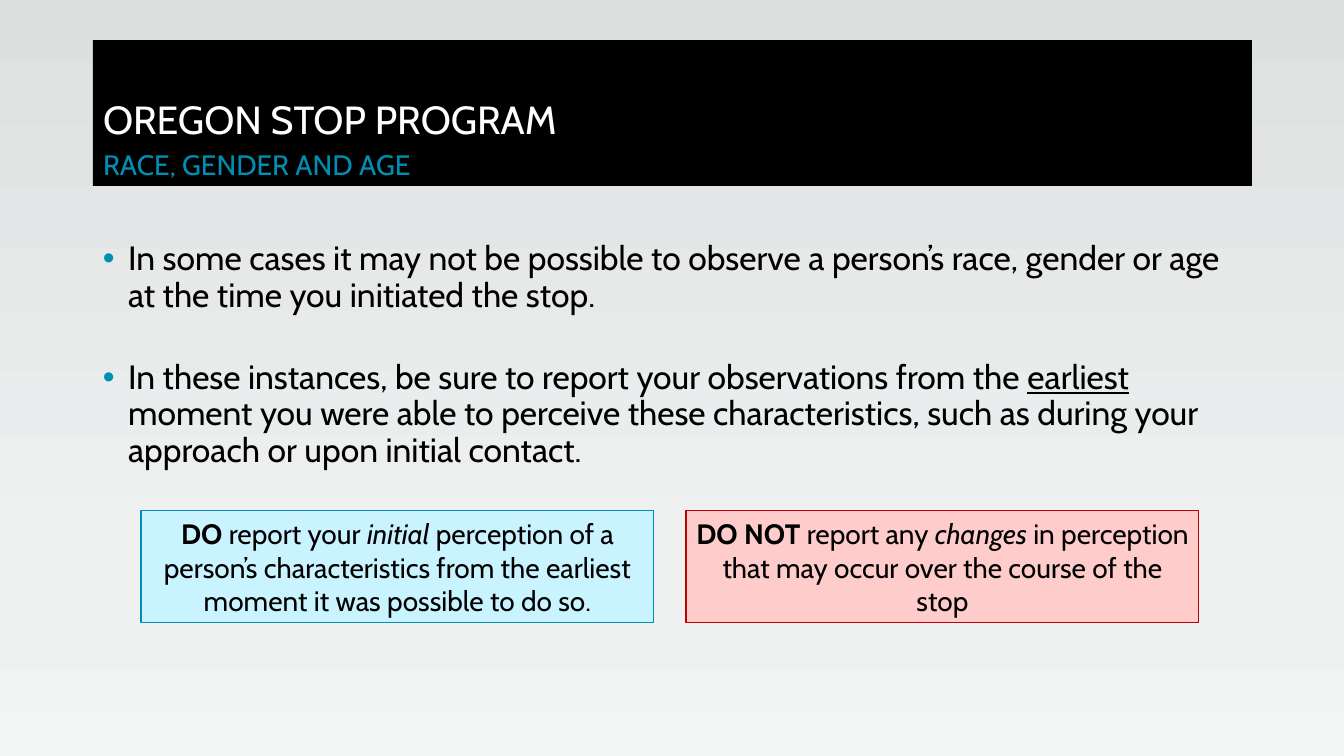
from dataclasses import dataclass

import lxml.etree
import pptx
import pptx.dml.color
import pptx.enum.shapes
import pptx.enum.text
import pptx.oxml.ns
import pptx.util

EMU_PER_PX = 914400 / 100.8
qn = pptx.oxml.ns.qn


@dataclass(frozen=True)
class Theme:
    font: str = "Cabin"
    ink: str = "000000"
    paper: str = "FFFFFF"
    accent: str = "008EB3"
    do_fill: str = "C9F4FF"
    dont_fill: str = "FFCCCC"
    dont_line: str = "BE0000"
    backdrop: tuple[tuple[int, str], ...] = (
        (0, "DCE0DF"), (74, "EFF1F1"), (83, "EFF1F1"), (100, "F4F6F5"))
    title_size: int = 28
    body_size: int = 24
    small_size: int = 20


@dataclass(frozen=True)
class Run:
    text: str
    bold: bool = False
    italic: bool = False
    underline: bool = False


@dataclass(frozen=True)
class Callout:
    fill: str
    line: str
    runs: tuple[Run, ...]


THEME = Theme()

BULLETS = (
    (Run("In some cases it may not be possible to observe a person’s race, "
         "gender or age at the time you initiated the stop."),),
    (Run("In these instances, be sure to report your observations from the "),
     Run("earliest", underline=True),
     Run(" moment you were able to perceive these characteristics, "
         "such as during your approach or upon initial contact.")),
)

CALLOUTS = (
    Callout(THEME.do_fill, THEME.accent, (
        Run("DO", bold=True), Run(" report your "), Run("initial", italic=True),
        Run(" perception of a person’s characteristics from the earliest "
            "moment it was possible to do so."))),
    Callout(THEME.dont_fill, THEME.dont_line, (
        Run("DO NOT", bold=True), Run(" report any "), Run("changes", italic=True),
        Run(" in perception that may occur over the course of the stop"))),
)


def px(n: int) -> pptx.util.Emu:
    return pptx.util.Emu(round(n * EMU_PER_PX))


def rgb(code: str) -> pptx.dml.color.RGBColor:
    return pptx.dml.color.RGBColor.from_string(code)


def add_run(p, run: Run, size: int, color: str) -> None:
    r = p.add_run()
    r.text = run.text
    r.font.name = THEME.font
    r.font.size = pptx.util.Pt(size)
    r.font.color.rgb = rgb(color)
    r.font.bold = run.bold
    r.font.italic = run.italic
    r.font.underline = run.underline


def set_background(slide) -> None:
    fill = slide.background.fill
    fill.gradient()
    fill.gradient_angle = 270
    stops = next(slide._element.iter(qn("a:gsLst")))
    for stop in list(stops):
        stops.remove(stop)
    for percent, color in THEME.backdrop:
        gs = lxml.etree.SubElement(stops, qn("a:gs"), pos=str(percent * 1000))
        lxml.etree.SubElement(gs, qn("a:srgbClr"), val=color)


def set_title(slide) -> None:
    sp = slide.shapes.title
    sp.left, sp.top, sp.width, sp.height = px(93), px(40), px(1159), px(146)
    sp.fill.solid()
    sp.fill.fore_color.rgb = rgb(THEME.ink)
    tf = sp.text_frame
    tf.auto_size = pptx.enum.text.MSO_AUTO_SIZE.NONE
    tf.vertical_anchor = pptx.enum.text.MSO_ANCHOR.BOTTOM
    p = tf.paragraphs[0]
    p.alignment = pptx.enum.text.PP_ALIGN.LEFT
    p.line_spacing = 1.14
    add_run(p, Run("OREGON STOP PROGRAM"), THEME.title_size, THEME.paper)
    p.add_line_break()
    # The break takes the title size, so it does not stretch the line
    lxml.etree.SubElement(p._p[-1], qn("a:rPr"), sz=str(THEME.title_size * 100))
    add_run(p, Run("RACE, GENDER AND AGE"), THEME.small_size, THEME.accent)


def set_bullet(p, color: str) -> None:
    indent = pptx.util.Inches(0.25)
    pPr = p._p.get_or_add_pPr()
    pPr.set("marL", str(indent))
    pPr.set("indent", str(-indent))
    clr = lxml.etree.SubElement(pPr, qn("a:buClr"))
    lxml.etree.SubElement(clr, qn("a:srgbClr"), val=color)
    lxml.etree.SubElement(pPr, qn("a:buFont"), typeface="Arial")
    lxml.etree.SubElement(pPr, qn("a:buChar"), char="•")


def add_bullets(slide) -> None:
    sp = slide.shapes.add_textbox(px(93), px(237), px(1159), px(250))
    tf = sp.text_frame
    tf.word_wrap = True
    for i, runs in enumerate(BULLETS):
        p = tf.add_paragraph() if i else tf.paragraphs[0]
        set_bullet(p, THEME.accent)
        p.line_spacing = 0.9
        if i:
            p.space_before = pptx.util.Pt(33)
        for run in runs:
            add_run(p, run, THEME.body_size, THEME.ink)


def add_callout(slide, callout: Callout, left: int) -> None:
    sp = slide.shapes.add_shape(pptx.enum.shapes.MSO_SHAPE.RECTANGLE,
                                px(left), px(511), px(513), px(112))
    sp.shadow.inherit = False
    sp.fill.solid()
    sp.fill.fore_color.rgb = rgb(callout.fill)
    sp.line.color.rgb = rgb(callout.line)
    sp.line.width = pptx.util.Pt(0.75)
    tf = sp.text_frame
    tf.word_wrap = True
    tf.vertical_anchor = pptx.enum.text.MSO_ANCHOR.MIDDLE
    p = tf.paragraphs[0]
    p.alignment = pptx.enum.text.PP_ALIGN.CENTER
    for run in callout.runs:
        add_run(p, run, THEME.small_size, THEME.ink)


def main() -> None:
    prs = pptx.Presentation()
    prs.slide_width, prs.slide_height = px(1344), px(756)
    slide = prs.slides.add_slide(prs.slide_layouts.get_by_name("Title Only"))
    set_background(slide)
    set_title(slide)
    add_bullets(slide)
    # Callouts side by side
    for i, callout in enumerate(CALLOUTS):
        add_callout(slide, callout, 141 + 545 * i)
    prs.save("out.pptx")


if __name__ == "__main__":
    main()
